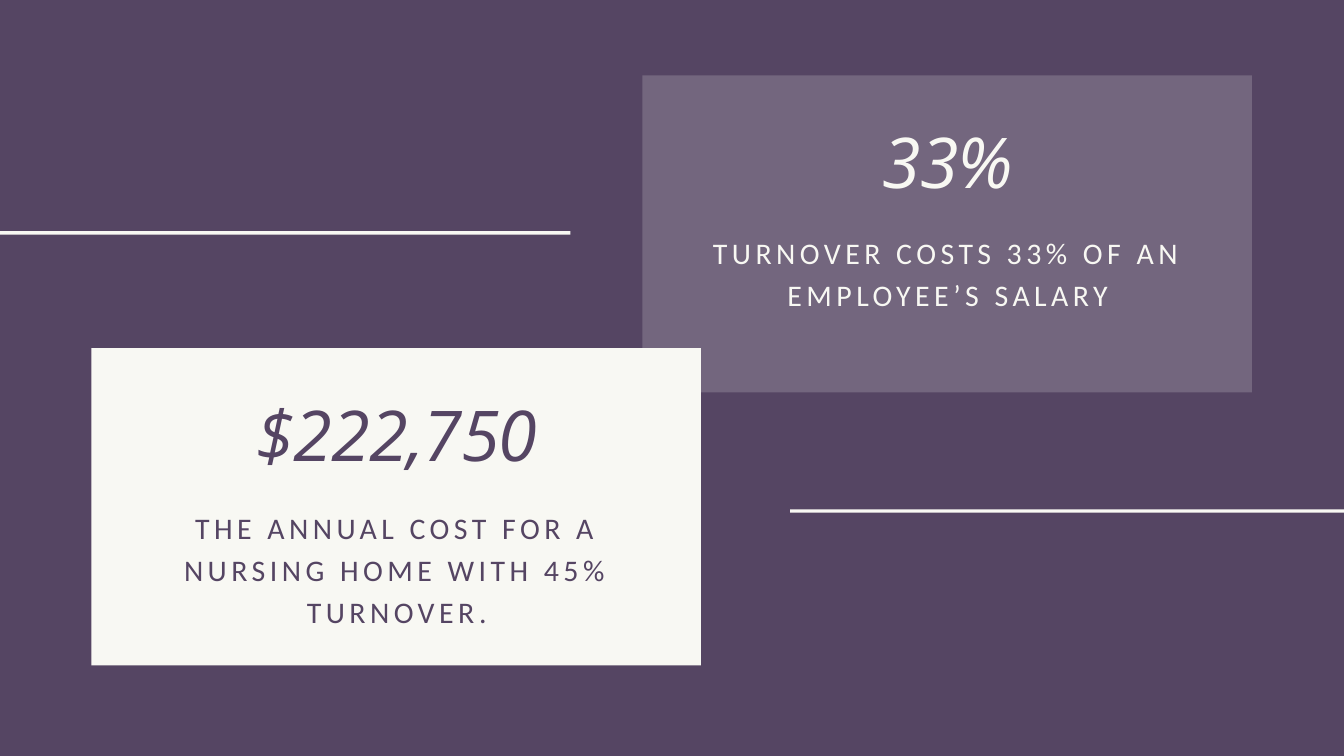
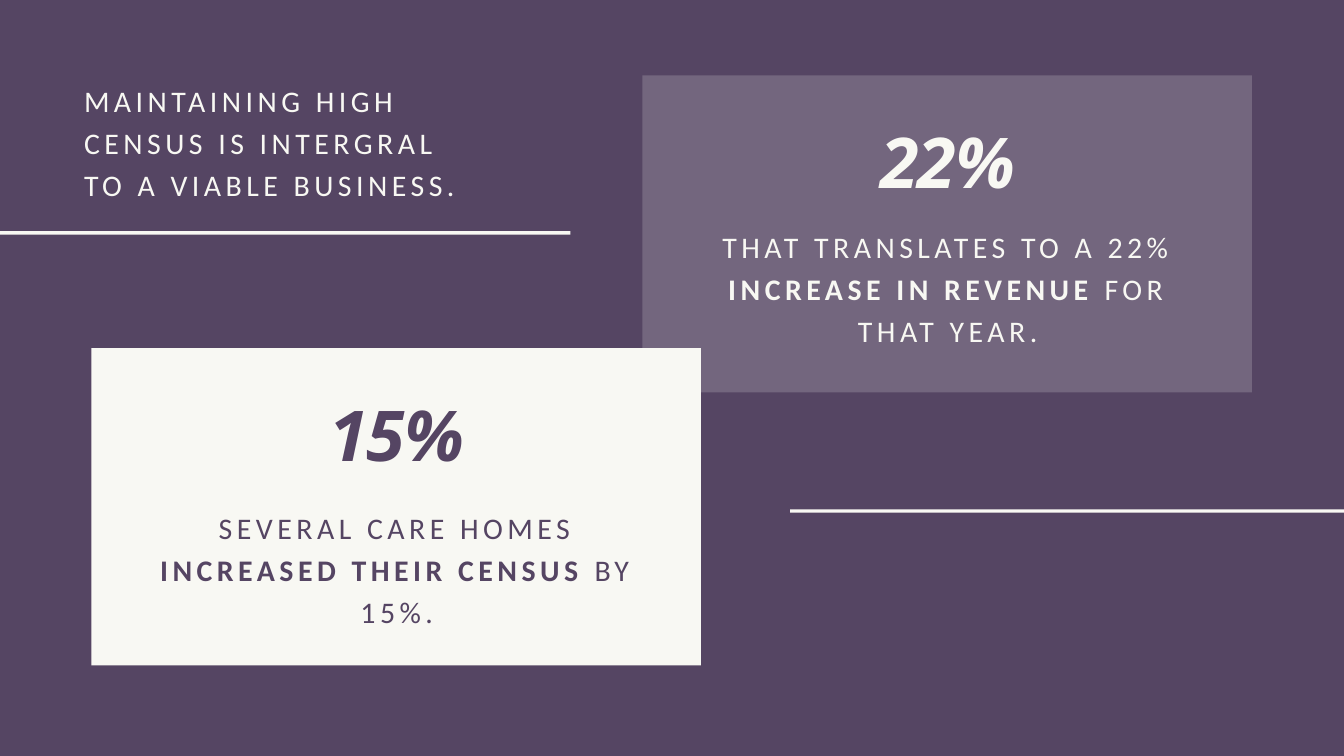
from pptx import Presentation
from pptx.dml.color import RGBColor
from pptx.enum.shapes import MSO_SHAPE
from pptx.enum.text import MSO_AUTO_SIZE, PP_ALIGN
from pptx.oxml.ns import qn
from pptx.util import Inches, Pt
from lxml import etree

# Shared look
PURPLE = RGBColor(0x55, 0x45, 0x63)
CREAM = RGBColor(0xF8, 0xF8, 0xF3)
FIGURE_FONT = "Open Sans"
BODY_FONT = "Calibri"
RECTANGLE = MSO_SHAPE.RECTANGLE
CENTER = PP_ALIGN.CENTER
LEFT = PP_ALIGN.LEFT
FIT_SHAPE = MSO_AUTO_SIZE.SHAPE_TO_FIT_TEXT

# Shared layout, in inches
CARD_WIDTH, CARD_HEIGHT = 9.07, 4.72
LOWER_CARD = (1.36, 5.18)
UPPER_CARD = (9.56, 1.12)
TEXT_INSET, TEXT_WIDTH = 0.88, 7.33
RULE_WIDTH, RULE_HEIGHT = 10.43, 0.05
RULES = [(11.76, 7.58), (-1.94, 3.44)]


def add_block(page, left, top, width, height, opacity=None):
    """Draw a cream rectangle, see-through if an opacity percentage is given."""
    block = page.shapes.add_shape(
        RECTANGLE, Inches(left), Inches(top), Inches(width), Inches(height))
    block.shadow.inherit = False
    block.fill.solid()
    block.fill.fore_color.rgb = CREAM
    block.line.fill.background()
    if opacity is not None:
        color = block._element.spPr.find(qn("a:solidFill"))[0]
        etree.SubElement(color, qn("a:alpha")).set("val", str(opacity * 1000))


def add_text(page, left, top, width, height, spans, size, font, color,
             line_spacing, tracking, align=CENTER, italic=False):
    """Write one paragraph from (words, bold) spans; tracking is in points."""
    box = page.shapes.add_textbox(
        Inches(left), Inches(top), Inches(width), Inches(height))
    frame = box.text_frame
    frame.word_wrap = True
    frame.auto_size = FIT_SHAPE
    frame.margin_left = frame.margin_right = 0
    frame.margin_top = frame.margin_bottom = 0
    para = frame.paragraphs[0]
    para.alignment = align
    para.line_spacing = Pt(line_spacing)
    for words, bold in spans:
        span = para.add_run()
        span.text = words
        span.font.name = font
        span.font.size = Pt(size)
        span.font.bold = bold
        span.font.italic = italic
        span.font.color.rgb = color
        span._r.get_or_add_rPr().set("spc", str(round(tracking * 100)))


def add_figure(page, left, top, words, color, bold):
    add_text(page, left, top, TEXT_WIDTH, 1.25, [(words, bold)],
             75, FIGURE_FONT, color, 90, -0.8, italic=True)


def add_body(page, left, top, spans, color, width=TEXT_WIDTH, lines=3,
             align=CENTER):
    add_text(page, left, top, width, 0.63 * lines, spans,
             32, BODY_FONT, color, 44.8, 4.8, align)


def add_card(page, corner, figure, spans, color, bold=False, opacity=None,
             body_drop=2.32, lines=3):
    """Draw a card with a large figure above its explanation."""
    left, top = corner
    add_block(page, left, top, CARD_WIDTH, CARD_HEIGHT, opacity)
    text_left = left + TEXT_INSET
    add_figure(page, text_left, top + 0.65, figure, color, bold)
    add_body(page, text_left, top + body_drop, spans, color, lines=lines)


def add_page(deck):
    """Add a purple page with the two rules that run off its sides."""
    page = deck.slides.add_slide(deck.slide_layouts[6])
    page.background.fill.solid()
    page.background.fill.fore_color.rgb = PURPLE
    for left, top in RULES:
        add_block(page, left, top, RULE_WIDTH, RULE_HEIGHT)
    return page


def build_turnover_page(deck):
    page = add_page(deck)
    add_card(page, UPPER_CARD, "33%",
             [("TURNOVER COSTS 33% OF AN EMPLOYEE’S SALARY", False)],
             CREAM, opacity=19, body_drop=2.29, lines=2)
    add_card(page, LOWER_CARD, "$222,750",
             [("THE ANNUAL COST FOR A NURSING HOME WITH 45% TURNOVER.", False)],
             PURPLE)


def build_census_page(deck):
    page = add_page(deck)
    add_body(page, 1.25, 1.14,
             [("MAINTAINING HIGH CENSUS IS INTERGRAL TO A VIABLE BUSINESS.",
               False)],
             CREAM, width=6.01, align=LEFT)
    add_card(page, UPPER_CARD, "22%",
             [("THAT TRANSLATES TO A 22% ", False),
              ("INCREASE IN REVENUE ", True),
              ("FOR THAT YEAR.", False)],
             CREAM, bold=True, opacity=19, body_drop=2.2)
    add_card(page, LOWER_CARD, "15%",
             [("SEVERAL CARE HOMES ", False),
              ("INCREASED THEIR CENSUS ", True),
              ("BY 15%.", False)],
             PURPLE, bold=True)


def main():
    deck = Presentation()
    deck.slide_width = Inches(20)
    deck.slide_height = Inches(11.25)
    build_turnover_page(deck)
    build_census_page(deck)
    deck.save("out.pptx")


if __name__ == "__main__":
    main()
